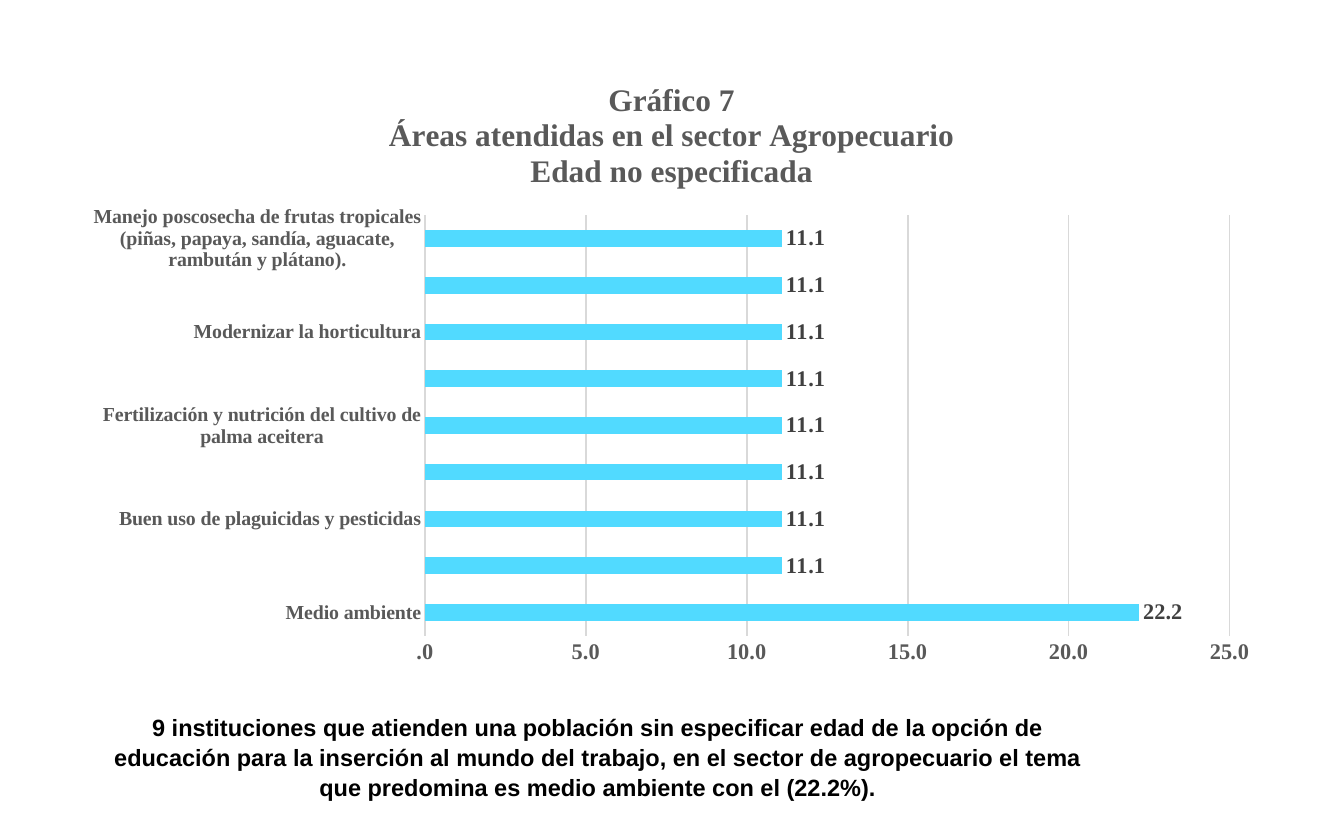
from dataclasses import dataclass
from typing import NamedTuple

from lxml import etree
from pptx import Presentation
from pptx import util as u
from pptx.chart import data as cd
from pptx.dml.color import RGBColor
from pptx.enum import chart as ch, text


@dataclass(frozen=True)
class Theme:
    serif: str = "Times New Roman"
    sans: str = "Arial"
    bar: str = "51DAFF"
    grid: str = "D9D9D9"
    grey: str = "595959"
    dark: str = "404040"
    black: str = "000000"
    title_size: float = 24
    body_size: float = 18
    value_size: float = 17.1
    category_size: float = 15.2
    rule: float = 1.43
    number_format: str = "####.0"


class Box(NamedTuple):
    left: float
    top: float
    width: float
    height: float

    def emu(self) -> list[u.Length]:
        return [u.Pt(v) for v in self]


class Area(NamedTuple):
    name: str
    percent: float


T = Theme()
SLIDE_W, SLIDE_H = 1028.88, 640.8
CHART_BOX = Box(53.28, 46.8, 921.6, 471.6)
NOTE_BOX = Box(66.24, 541.44, 782.64, 72.72)
PLOT = Box(272, 118, 616, 322)  # inside the chart

TITLE = "Gráfico 7\nÁreas atendidas en el sector Agropecuario\nEdad no especificada"
NOTE = ("9 instituciones que atienden una población sin especificar edad de la opción de "
        "educación para la inserción al mundo del trabajo, en el sector de agropecuario el tema "
        "que predomina es medio ambiente con el (22.2%).")
AREAS = [
    Area("Medio ambiente", 22.2),
    Area("Sanidad aves de corral", 11.1),
    Area("Buen uso de plaguicidas y pesticidas", 11.1),
    Area("Cultivo de Hortalizas", 11.1),
    Area("Fertilización y nutrición del cultivo de palma aceitera", 11.1),
    Area("Manejo integrado de Bactericera cockerelli en papa", 11.1),
    Area("Modernizar la horticultura", 11.1),
    Area("Producción del cultivo de plátano énfasis en mercado interno", 11.1),
    Area("Manejo poscosecha de frutas tropicales (piñas, papaya, sandía, aguacate, "
         "rambután y plátano).", 11.1),
]


def style_font(font, name: str, size: float, color: str, bold: bool = True) -> None:
    font.name, font.size, font.bold = name, u.Pt(size), bold
    font.color.rgb = RGBColor.from_string(color)


def style_line(line) -> None:
    line.color.rgb = RGBColor.from_string(T.grid)
    line.width = u.Pt(T.rule)


def style_axis(axis, size: float) -> None:
    axis.major_tick_mark = axis.minor_tick_mark = ch.XL_TICK_MARK.NONE
    style_font(axis.tick_labels.font, T.serif, size, T.grey)


def place_plot(chart, plot: Box, frame: Box) -> None:
    """Fix the inner plot area as fractions of the chart frame."""
    area = chart.plots[0]._element.getparent()
    ns = area.nsmap["c"]
    for old in area.findall(f"{{{ns}}}layout"):
        area.remove(old)
    layout = etree.Element(f"{{{ns}}}layout")
    manual = etree.SubElement(layout, f"{{{ns}}}manualLayout")
    settings = {
        "layoutTarget": "inner", "xMode": "edge", "yMode": "edge",
        "x": plot.left / frame.width, "y": plot.top / frame.height,
        "w": plot.width / frame.width, "h": plot.height / frame.height,
    }
    for tag, value in settings.items():
        etree.SubElement(manual, f"{{{ns}}}{tag}").set("val", str(value))
    area.insert(0, layout)


def add_area_chart(s, areas: list[Area]) -> None:
    data = cd.CategoryChartData(number_format=T.number_format)
    data.categories = [a.name for a in areas]
    data.add_series("Series 1", [a.percent for a in areas])
    chart = s.shapes.add_chart(ch.XL_CHART_TYPE.BAR_CLUSTERED, *CHART_BOX.emu(), data).chart
    chart.has_legend = False
    style_font(chart.font, T.serif, 10, T.black, bold=False)

    # Title
    chart.has_title = True
    tf = chart.chart_title.text_frame
    tf.text = TITLE
    for p in tf.paragraphs:
        style_font(p.font, T.serif, T.title_size, T.grey)
        for r in p.runs:
            style_font(r.font, T.serif, T.title_size, T.grey)

    # Axes
    style_axis(chart.category_axis, T.category_size)
    style_line(chart.category_axis.format.line)
    values = chart.value_axis
    style_axis(values, T.value_size)
    values.minimum_scale, values.maximum_scale, values.major_unit = 0, 25, 5
    values.tick_labels.number_format = T.number_format
    values.tick_labels.number_format_is_linked = False
    values.format.line.fill.background()
    style_line(values.major_gridlines.format.line)

    # Bars and their values
    plot = chart.plots[0]
    plot.gap_width, plot.vary_by_categories = 182, False
    bars = plot.series[0]
    bars.format.fill.solid()
    bars.format.fill.fore_color.rgb = RGBColor.from_string(T.bar)
    labels = bars.data_labels
    labels.show_value = True
    labels.position = ch.XL_LABEL_POSITION.OUTSIDE_END
    labels.number_format, labels.number_format_is_linked = T.number_format, False
    style_font(labels.font, T.serif, T.value_size, T.dark)
    place_plot(chart, PLOT, CHART_BOX)


def add_note(s, content: str) -> None:
    tf = s.shapes.add_textbox(*NOTE_BOX.emu()).text_frame
    tf.word_wrap = True
    tf.auto_size = text.MSO_AUTO_SIZE.SHAPE_TO_FIT_TEXT
    tf.text = content
    p = tf.paragraphs[0]
    p.alignment = text.PP_ALIGN.CENTER
    p.line_spacing = 1.05
    style_font(p.runs[0].font, T.sans, T.body_size, T.black)


def main() -> None:
    prs = Presentation()
    prs.slide_width, prs.slide_height = u.Pt(SLIDE_W), u.Pt(SLIDE_H)
    s = prs.slides.add_slide(prs.slide_layouts[6])
    add_note(s, NOTE)
    add_area_chart(s, AREAS)
    prs.save("out.pptx")


if __name__ == "__main__":
    main()
